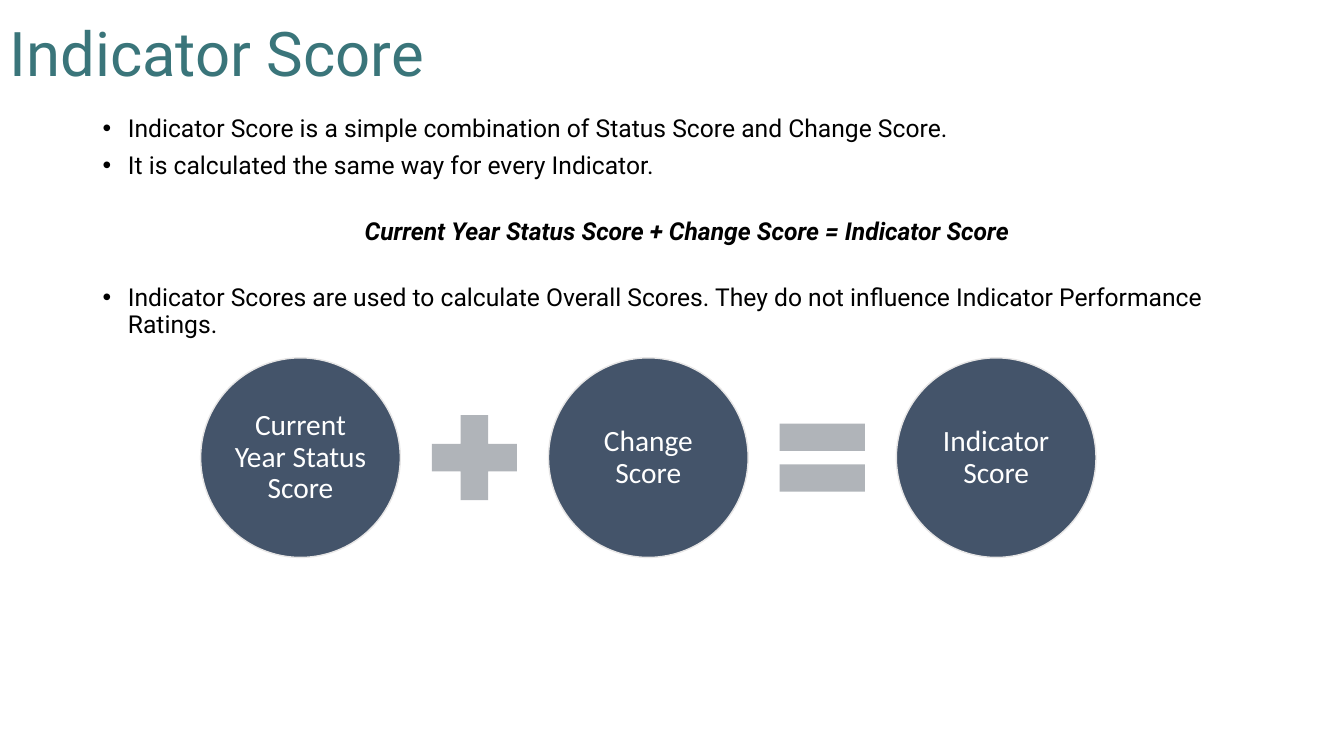
"""Build the Indicator Score slide: title, explanation and score equation."""
import pptx
import pptx.dml.color
import pptx.enum.shapes
import pptx.enum.text
import pptx.oxml.ns
import pptx.util
from lxml import etree

Inches = pptx.util.Inches
Pt = pptx.util.Pt
Align = pptx.enum.text.PP_ALIGN
Anchor = pptx.enum.text.MSO_ANCHOR
Shape = pptx.enum.shapes.MSO_SHAPE

COLORS = {
    "title": "3A757A",
    "body": "000000",
    "circle": "44546A",
    "outline": "E7E6E6",
    "operator": "B0B4B9",
    "label": "FFFFFF",
}


def rgb(name):
    return pptx.dml.color.RGBColor.from_string(COLORS[name])


def write(frame, text, size, color, font="Roboto", align=Align.LEFT,
          before=0, emphasis=False, bullet=False):
    paragraph = frame.paragraphs[0]
    if paragraph.runs:
        paragraph = frame.add_paragraph()
    paragraph.alignment = align
    paragraph.line_spacing = 0.9
    paragraph.space_before = Pt(before)
    run = paragraph.add_run()
    run.text = text
    run.font.name = font
    run.font.size = Pt(size)
    run.font.bold = run.font.italic = emphasis
    run.font.color.rgb = rgb(color)
    if bullet:
        properties = paragraph._p.get_or_add_pPr()
        properties.set("marL", str(Inches(0.25)))
        properties.set("indent", str(-Inches(0.25)))
        for tag, attribute, value in (("a:buFont", "typeface", "Arial"), ("a:buChar", "char", "•")):
            etree.SubElement(properties, pptx.oxml.ns.qn(tag)).set(attribute, value)


presentation = pptx.Presentation()
presentation.slide_width = Inches(13.33)
presentation.slide_height = Inches(7.5)
slide = presentation.slides.add_slide(presentation.slide_layouts[6])

title = slide.shapes.add_textbox(Inches(0), Inches(0.02), Inches(11.5), Inches(1.08)).text_frame
title.word_wrap = True
title.vertical_anchor = Anchor.MIDDLE
write(title, "Indicator Score", size=44, color="title")

explanation = slide.shapes.add_textbox(Inches(0.92), Inches(1.1), Inches(11.79), Inches(3.41)).text_frame
explanation.word_wrap = True
point = {"size": 17.6, "color": "body", "bullet": True}
write(explanation, "Indicator Score is a simple combination of Status Score and Change Score.",
      before=8, **point)
write(explanation, "It is calculated the same way for every Indicator.", before=8, **point)
write(explanation, "Current Year Status Score + Change Score = Indicator Score",
      size=17.6, color="body", align=Align.CENTER, before=28, emphasis=True)
write(explanation, "Indicator Scores are used to calculate Overall Scores. "
      "They do not influence Indicator Performance Ratings.", before=28, **point)

scores = ["Current Year Status Score", "Change Score", "Indicator Score"]
operators = [Shape.MATH_PLUS, Shape.MATH_EQUAL]
first_left, pitch, middle = 1.99, 3.45, 4.54
circle_size, operator_size = 1.98, 1.15

for index, score in enumerate(scores):
    circle = slide.shapes.add_shape(
        Shape.OVAL, Inches(first_left + index * pitch), Inches(middle - circle_size / 2),
        Inches(circle_size), Inches(circle_size))
    circle.shadow.inherit = False
    circle.fill.solid()
    circle.fill.fore_color.rgb = rgb("circle")
    circle.line.color.rgb = rgb("outline")
    circle.line.width = Pt(1)
    label = circle.text_frame
    label.word_wrap = True
    label.vertical_anchor = Anchor.MIDDLE
    label.margin_left = label.margin_right = Inches(0.03)
    label.margin_top = label.margin_bottom = Inches(0.03)
    write(label, score, size=21, color="label", font="Calibri", align=Align.CENTER)

for index, kind in enumerate(operators):
    center = first_left + circle_size / 2 + (index + 0.5) * pitch
    operator = slide.shapes.add_shape(
        kind, Inches(center - operator_size / 2), Inches(middle - operator_size / 2),
        Inches(operator_size), Inches(operator_size))
    operator.shadow.inherit = False
    operator.fill.solid()
    operator.fill.fore_color.rgb = rgb("operator")
    operator.line.fill.background()

presentation.save("out.pptx")
